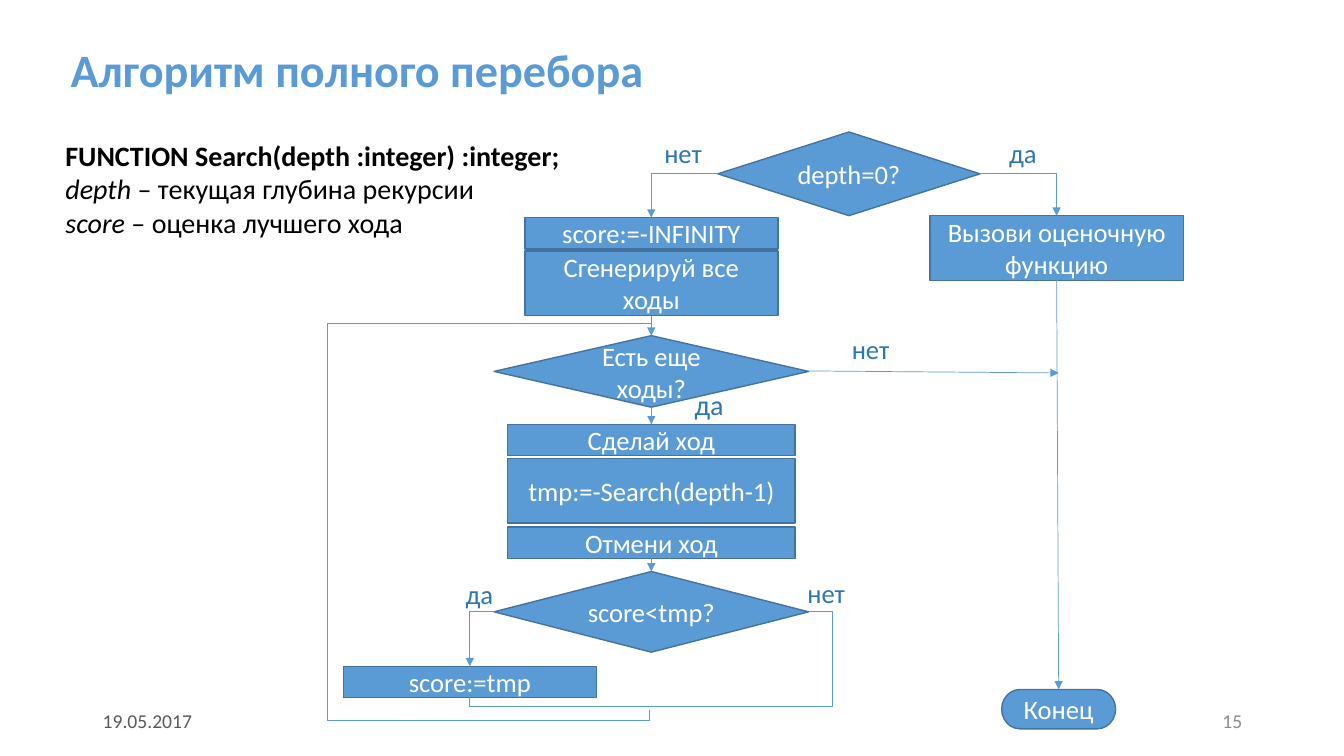
"""Build a flowchart slide of the full search algorithm."""
import dataclasses

import pptx
import pptx.dml.color
import pptx.enum.shapes
import pptx.enum.text
import pptx.oxml
import pptx.oxml.ns
import pptx.util

Inches = pptx.util.Inches
Pt = pptx.util.Pt
Form = pptx.enum.shapes.MSO_SHAPE
Wire = pptx.enum.shapes.MSO_CONNECTOR
Align = pptx.enum.text.PP_ALIGN
Anchor = pptx.enum.text.MSO_ANCHOR
Fit = pptx.enum.text.MSO_AUTO_SIZE


@dataclasses.dataclass(frozen=True)
class Theme:
    font: str = "Calibri"
    blue: str = "5B9BD5"
    edge: str = "43739E"
    label: str = "2E75B6"
    white: str = "FFFFFF"
    black: str = "000000"
    date: str = "595959"
    page: str = "8C8C8C"
    head: int = 33
    body: int = 20
    node: int = 19
    foot: int = 14


THEME = Theme()
MID = 6.46
LEFT = 4.66
RIGHT = 10.48


def rgb(color):
    return pptx.dml.color.RGBColor.from_string(color)


def style(par, size, color, align=Align.LEFT, bold=None):
    par.alignment = align
    par.font.name = THEME.font
    par.font.size = Pt(size)
    par.font.color.rgb = rgb(color)
    par.font.bold = bold


def add_title(slide, text):
    title = slide.shapes.title
    title.left, title.top = Inches(0.6), Inches(0.13)
    title.width, title.height = Inches(9.37), Inches(1.18)
    frame = title.text_frame
    frame.text = text
    frame.auto_size = Fit.NONE
    frame.vertical_anchor = Anchor.MIDDLE
    style(frame.paragraphs[0], THEME.head, THEME.blue, bold=True)
    frame.paragraphs[0].line_spacing = 0.9


def add_box(slide, left, top, width, height, wrap=True):
    box = slide.shapes.add_textbox(
        Inches(left), Inches(top), Inches(width), Inches(height))
    box.text_frame.word_wrap = wrap
    return box.text_frame


def add_label(slide, text, left, top, size=THEME.node):
    frame = add_box(slide, left, top, 0.29 + 0.1 * len(text), 0.42, False)
    frame.text = text
    frame.auto_size = Fit.SHAPE_TO_FIT_TEXT
    style(frame.paragraphs[0], size, THEME.label)


def add_foot(slide, text, left, color, align):
    frame = add_box(slide, left, 6.95, 3, 0.4)
    frame.text = text
    frame.vertical_anchor = Anchor.MIDDLE
    style(frame.paragraphs[0], THEME.foot, color, align)


def add_intro(slide, head, terms):
    frame = add_box(slide, 0.55, 1.32, 5.18, 1.45)
    frame.text = head
    style(frame.paragraphs[0], THEME.body, THEME.black, bold=True)
    for term, sense in terms:
        par = frame.add_paragraph()
        style(par, THEME.body, THEME.black)
        run = par.add_run()
        run.text = term
        run.font.italic = True
        par.add_run().text = f" – {sense}"


def add_node(slide, form, text, center, top, width, height):
    node = slide.shapes.add_shape(
        form, Inches(center - width / 2), Inches(top),
        Inches(width), Inches(height))
    node.shadow.inherit = False
    node.fill.solid()
    node.fill.fore_color.rgb = rgb(THEME.blue)
    node.line.color.rgb = rgb(THEME.edge)
    node.line.width = Pt(1)
    frame = node.text_frame
    frame.text = text
    frame.word_wrap = True
    frame.vertical_anchor = Anchor.MIDDLE
    style(frame.paragraphs[0], THEME.node, THEME.white, Align.CENTER)


def add_link(slide, start, end, arrow=True, bent=None, bends=()):
    kind = Wire.ELBOW if bent else Wire.STRAIGHT
    link = slide.shapes.add_connector(
        kind, *(Inches(value) for value in (*start, *end)))
    link.line.color.rgb = rgb(THEME.blue)
    link.line.width = Pt(0.5)
    props = link._element.spPr
    qn = pptx.oxml.ns.qn
    if bent:
        shape = props.find(qn("a:prstGeom"))
        shape.set("prst", bent)
        guides = shape.get_or_add_avLst()
        for index, bend in enumerate(bends, 1):
            guide = guides.makeelement(qn("a:gd"), {
                "name": f"adj{index}", "fmla": f"val {round(bend * 100000)}"})
            guides.append(guide)
    if arrow:
        line = link.line._get_or_add_ln()
        line.append(line.makeelement(qn("a:tailEnd"), {"type": "triangle"}))
    props.append(props.makeelement(qn("a:effectLst"), {}))


def add_links(slide):
    for top, end in ((3.14, 3.33), (4.04, 4.21), (5.54, 5.67)):
        add_link(slide, (MID, top), (MID, end))
    add_link(slide, (RIGHT, 2.78), (10.5, 6.84))
    add_link(slide, (8.02, 3.68), (10.5, 3.7))
    for start, end in (
            ((7.12, 1.72), (MID, 2.16)),
            ((9.72, 1.72), (RIGHT, 2.14)),
            ((4.91, 6.07), (LEFT, 6.61))):
        add_link(slide, start, end, bent="bentConnector2")
    add_link(slide, (8.02, 6.07), (LEFT, 6.91), False,
             "bentConnector4", (-0.07, 1.12))
    add_link(slide, (6.44, 7.04), (6.44, 7.15), False)
    add_link(slide, (6.44, 7.15), (3.25, 3.21), False, "bentConnector2")
    add_link(slide, (3.25, 3.21), (MID, 3.21), False)


def add_nodes(slide):
    test, step = Form.FLOWCHART_DECISION, Form.FLOWCHART_PROCESS
    for node in (
            (test, "depth=0?", 8.42, 1.31, 2.6, 0.83),
            (step, "Вызови оценочную функцию", RIGHT, 2.14, 2.51, 0.64),
            (step, "score:=-INFINITY", MID, 2.16, 2.51, 0.31),
            (step, "Сгенерируй все ходы", MID, 2.49, 2.51, 0.64),
            (test, "Есть еще ходы?", MID, 3.33, 3.12, 0.71),
            (step, "Сделай ход", MID, 4.21, 2.85, 0.31),
            (step, "tmp:=-Search(depth-1)", MID, 4.55, 2.85, 0.64),
            (step, "Отмени ход", MID, 5.23, 2.85, 0.31),
            (test, "score<tmp?", MID, 5.67, 3.12, 0.8),
            (step, "score:=tmp", LEFT, 6.61, 2.51, 0.31),
            (Form.FLOWCHART_TERMINATOR, "Конец", 10.5, 6.84, 1.13, 0.39)):
        add_node(slide, *node)


def main():
    deck = pptx.Presentation()
    deck.slide_width, deck.slide_height = Inches(13.33), Inches(7.5)
    slide = deck.slides.add_slide(deck.slide_layouts[5])
    add_title(slide, "Алгоритм полного перебора")
    add_foot(slide, "19.05.2017", 0.92, THEME.date, Align.LEFT)
    add_foot(slide, "15", 9.42, THEME.page, Align.RIGHT)
    add_intro(slide, "FUNCTION Search(depth :integer) :integer;", (
        ("depth", "текущая глубина рекурсии"),
        ("score", "оценка лучшего хода")))
    add_nodes(slide)
    add_links(slide)
    add_label(slide, "да", 6.79, 3.79, THEME.body)
    for text, left, top in (
            ("нет", 6.49, 1.31), ("да", 9.91, 1.31), ("нет", 8.35, 3.25),
            ("да", 4.52, 5.68), ("нет", 7.91, 5.67)):
        add_label(slide, text, left, top)
    deck.save("out.pptx")


if __name__ == "__main__":
    main()
